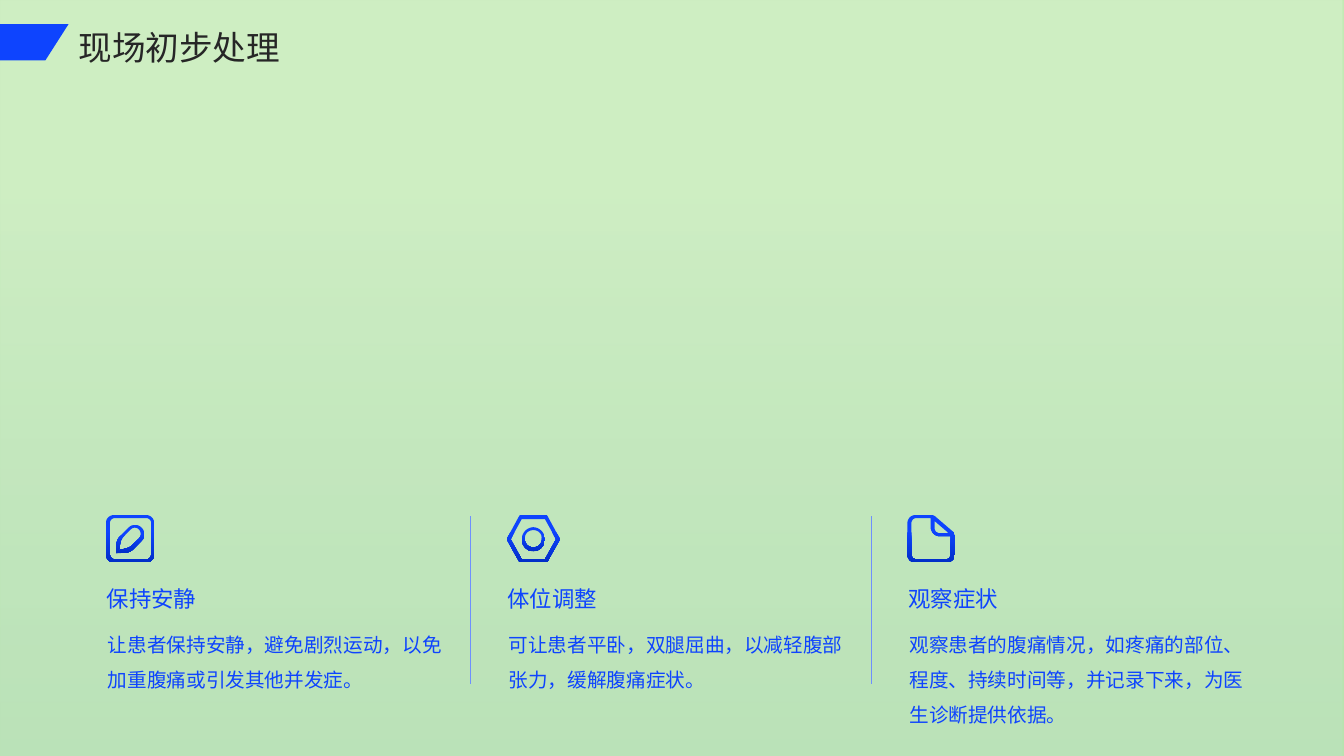
import pptx
import pptx.util
import pptx.dml.color
import pptx.enum.shapes
import pptx.enum.text
import pptx.oxml
import pptx.oxml.ns

# Content
TITLE = "现场初步处理"
STEPS = [
    ("保持安静", "让患者保持安静，避免剧烈运动，以免加重腹痛或引发其他并发症。"),
    ("体位调整", "可让患者平卧，双腿屈曲，以减轻腹部张力，缓解腹痛症状。"),
    ("观察症状", "观察患者的腹痛情况，如疼痛的部位、程度、持续时间等，并记录下来，为医生诊断提供依据。"),
]


def box(x, y, w, h, r):
    return [(x, y, r), (x + w, y, r), (x + w, y + h, r), (x, y + h, r)]


# Icons: shapes made of contours, each a list of corners (x, y, radius)
PEN = [
    [[(.1, .38, 0), (.11, .24, .04), (.29, .06, .09), (.42, .19, .09), (.24, .37, .04)],
     [(.13, .35, 0), (.15, .24, .03), (.29, .1, .06), (.37, .19, .06), (.24, .32, .03)]],
    [box(0, 0, .48, .47, .08), box(.04, .03, .41, .41, .05)],
]
NUT = [
    [[(.13, 0, .01), (.4, 0, .01), (.53, .24, .01), (.4, .47, .01), (.13, .47, .01), (0, .24, .01)],
     [(.15, .04, 0), (.38, .04, 0), (.49, .24, 0), (.38, .44, 0), (.15, .44, 0), (.04, .24, 0)]],
    [box(.15, .12, .23, .24, .12), box(.18, .15, .17, .17, .08)],
]
PAGE = [
    [[(0, 0, .08), (.26, 0, .02), (.47, .18, .02), (.47, .47, .08), (0, .47, .08)],
     [(.04, .03, .05), (.23, .03, 0), (.23, .21, .09), (.43, .21, 0), (.43, .44, .05), (.04, .44, .05)],
     [(.27, .06, 0), (.41, .18, 0), (.27, .18, .05)]],
]
ICONS = [PEN, NUT, PAGE]

# Formats
FONT = "Noto Sans CJK SC"
BLUE, DARK, RULE, GREEN = "0E44FE", "262626", "6E8FFE", "B4E5A2"
INK = [(34, BLUE, 100), (100, "012EC8", 100)]
VEIL = [(0, "CFDAFF", 23), (76, "FFFFFF", 35)]
FLAT = dict.fromkeys(["margin_left", "margin_top", "margin_right", "margin_bottom"], 0)
MID = {**FLAT, "vertical_anchor": pptx.enum.text.MSO_ANCHOR.MIDDLE}
GROW = {"auto_size": pptx.enum.text.MSO_AUTO_SIZE.SHAPE_TO_FIT_TEXT}

# Grid
WIDE, HIGH = 13.33, 7.5
LEFT, STEP, TOP = 1.05, 3.975, 5.11
GAP = 3.62

inch = pptx.util.Inches
deck = pptx.Presentation()
deck.slide_width, deck.slide_height = inch(WIDE), inch(HIGH)
slide = deck.slides.add_slide(deck.slide_layouts[6])
shapes = slide.shapes


def tint(code):
    return pptx.dml.color.RGBColor.from_string(code)


def blend(shape, stops, angle):
    shape.fill.gradient()
    prop = shape._element.spPr
    old = prop.find(pptx.oxml.ns.qn("a:gradFill"))
    marks = "".join(
        f'<a:gs pos="{pos * 1000}"><a:srgbClr val="{code}">'
        f'<a:alpha val="{alpha * 1000}"/></a:srgbClr></a:gs>'
        for pos, code, alpha in stops)
    prop.replace(old, pptx.oxml.parse_xml(
        f'<a:gradFill {pptx.oxml.ns.nsdecls("a")} rotWithShape="1"><a:gsLst>{marks}</a:gsLst>'
        f'<a:lin ang="{angle * 60000}" scaled="0"/></a:gradFill>'))


def curve(corners):
    """Points of a closed outline with rounded corners."""
    points = []
    for i, (x, y, r) in enumerate(corners):
        if not r:
            points.append((x, y))
            continue
        ends = []
        for px, py, _ in (corners[i - 1], corners[(i + 1) % len(corners)]):
            size = ((px - x) ** 2 + (py - y) ** 2) ** .5
            ends.append((x + (px - x) * r / size, y + (py - y) * r / size))
        (ax, ay), (bx, by) = ends
        for n in range(9):
            t = n / 8
            # Cubic weights for a near-circular arc
            a = (1 - t) ** 3 + 1.35 * (1 - t) ** 2 * t
            b = t ** 3 + 1.35 * (1 - t) * t ** 2
            points.append((a * ax + b * bx + (1 - a - b) * x, a * ay + b * by + (1 - a - b) * y))
    return points


def draw(rings, x, y):
    rings = [[(inch(x + u), inch(y + v)) for u, v in curve(ring)] for ring in rings]
    pen = shapes.build_freeform(*rings[0][0], scale=1.0)
    for i, ring in enumerate(rings):
        if i:
            pen.move_to(*ring[0])
        pen.add_line_segments(ring[1:], close=True)
    shape = pen.convert_to_shape()
    shape.shadow.inherit = False
    shape.line.fill.background()
    return shape


def write(text, x, y, w, h, size, code, space, form):
    frame = shapes.add_textbox(*map(inch, (x, y, w, h))).text_frame
    for key, value in {"word_wrap": True, **form}.items():
        setattr(frame, key, value)
    para = frame.paragraphs[0]
    para.line_spacing = space
    run = para.add_run()
    run.text = text
    for key, value in {"size": pptx.util.Pt(size), "name": FONT}.items():
        setattr(run.font, key, value)
    run.font.color.rgb = tint(code)
    face = run._r.get_or_add_rPr().makeelement(pptx.oxml.ns.qn("a:ea"), {"typeface": FONT})
    run._r.get_or_add_rPr().append(face)


# Background and veil
back = slide.background.fill
back.solid()
back.fore_color.rgb = tint(GREEN)
veil = shapes.add_shape(pptx.enum.shapes.MSO_SHAPE.RECTANGLE, 0, 0, inch(WIDE), inch(HIGH))
veil.shadow.inherit = False
veil.line.fill.background()
blend(veil, VEIL, 270)

# Columns
for i, (head, body) in enumerate(STEPS):
    x = LEFT + i * STEP
    for rings in ICONS[i]:
        blend(draw(rings, x, TOP), INK, 90)
    write(head, x + .01, 5.59, 3.38, .56, 16, BLUE, 1.5, MID)
    write(body, x + .02, 6.16, 3.36, 1.08, 14, BLUE, 1.5, FLAT)
    if i < len(STEPS) - 1:
        rule = shapes.add_connector(pptx.enum.shapes.MSO_CONNECTOR.STRAIGHT,
                                    *map(inch, (x + GAP, 5.12, x + GAP, 6.79)))
        rule.line.color.rgb = tint(RULE)
        rule.line.width = pptx.util.Pt(.75)
        prop = rule._element.spPr
        prop.append(prop.makeelement(pptx.oxml.ns.qn("a:effectLst"), {}))

# Title
flag = draw([[(0, 0, 0), (.68, 0, 0), (.45, .36, 0), (0, .36, 0)]], 0, .24)
flag.fill.solid()
flag.fill.fore_color.rgb = tint(BLUE)
write(TITLE, .68, .18, 11.71, .46, 24, DARK, 1.1, GROW)

deck.save("out.pptx")
